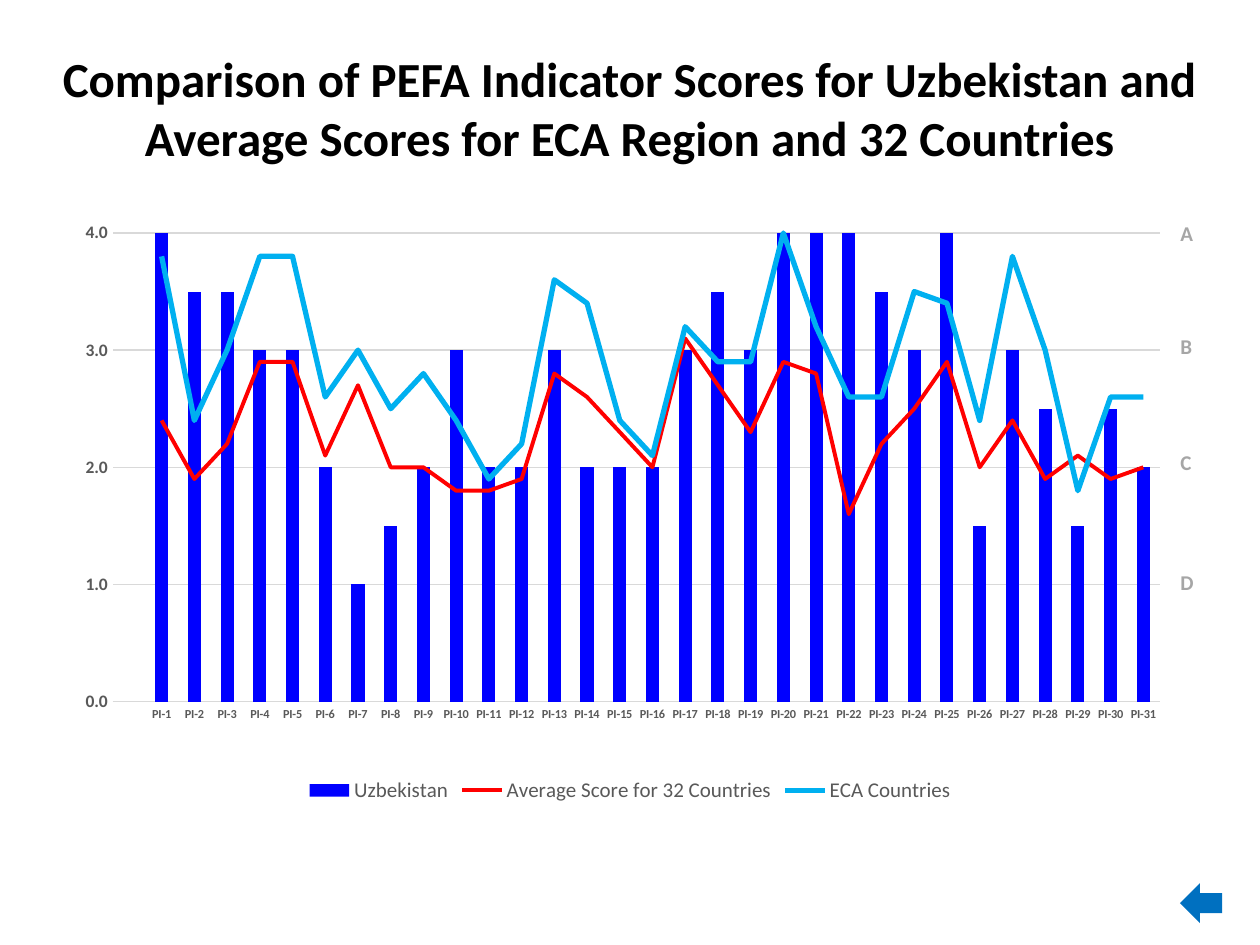
from lxml import etree
from pptx import Presentation
from pptx import util as u
from pptx.chart import data
from pptx.dml import color
from pptx.enum import chart as ch, shapes, text
from pptx.oxml import ns, parse_xml

HEAD = ("Comparison of PEFA Indicator Scores for Uzbekistan and "
        "Average Scores for ECA Region and 32 Countries")
GRADES = ["A", "B", "C", "D"]
GAPS = [0, 50, 52, 54]
COUNT = 31
SERIES = [
    ("Uzbekistan", "bar", 0,
     [4, 3.5, 3.5, 3, 3, 2, 1, 1.5, 2, 3, 2, 2, 3, 2, 2, 2,
      3, 3.5, 3, 4, 4, 4, 3.5, 3, 4, 1.5, 3, 2.5, 1.5, 2.5, 2]),
    ("Average Score for 32 Countries", "mean", 2.25,
     [2.4, 1.9, 2.2, 2.9, 2.9, 2.1, 2.7, 2, 2, 1.8, 1.8, 1.9, 2.8, 2.6, 2.3, 2,
      3.1, 2.7, 2.3, 2.9, 2.8, 1.6, 2.2, 2.5, 2.9, 2, 2.4, 1.9, 2.1, 1.9, 2]),
    ("ECA Countries", "region", 3,
     [3.8, 2.4, 3, 3.8, 3.8, 2.6, 3, 2.5, 2.8, 2.4, 1.9, 2.2, 3.6, 3.4, 2.4, 2.1,
      3.2, 2.9, 2.9, 4, 3.2, 2.6, 2.6, 3.5, 3.4, 2.4, 3.8, 3, 1.8, 2.6, 2.6]),
]
HUES = {"bar": "0000FF", "mean": "FF0000", "region": "00B0F0", "head": "000000",
        "axis": "595959", "grid": "D9D9D9", "grade": "A6A6A6", "arrow": "0070C0"}
FRAME = {"x": 0.08, "y": 0.08, "w": 0.85, "h": 0.75}
SCALE = 914400 / 126


def px(*nums):
    return [u.Emu(round(n * SCALE)) for n in nums]


def hue(name):
    return color.RGBColor.from_string(HUES[name])


def style(font, size, name, bold=False):
    font.name, font.size, font.bold = "Calibri", u.Pt(size), bold
    font.color.rgb = hue(name)


def write(para, words, size, name, bold=True, align=None, gap=0):
    run = para.add_run()
    run.text = words
    style(run.font, size, name, bold)
    para.alignment = align
    para.space_before = u.Pt(gap)


def stroke(line, name, width):
    line.color.rgb = hue(name)
    line.width = u.Pt(width)


def combine(chart):
    bars = chart.plots[0]
    node = bars.series[0]._element.getparent()
    lines = parse_xml(f'<c:lineChart {ns.nsdecls("c")}><c:grouping val="standard"/>'
                      '<c:varyColors val="0"/></c:lineChart>')
    for ser in list(bars.series)[1:]:
        item = ser._element
        for flag in item.findall(ns.qn("c:invertIfNegative")):
            item.remove(flag)
        lines.append(item)
    etree.SubElement(lines, ns.qn("c:marker")).set("val", "1")
    for axis in node.findall(ns.qn("c:axId")):
        etree.SubElement(lines, ns.qn("c:axId")).set("val", axis.get("val"))
    node.addnext(lines)


def place(chart):
    area = chart._chartSpace.chart.plotArea
    for old in area.findall(ns.qn("c:layout")):
        area.remove(old)
    modes = '<c:xMode val="edge"/><c:yMode val="edge"/>'
    sizes = "".join(f'<c:{k} val="{v}"/>' for k, v in FRAME.items())
    area.insert(0, parse_xml(
        f'<c:layout {ns.nsdecls("c")}><c:manualLayout><c:layoutTarget val="inner"/>'
        f'{modes}{sizes}</c:manualLayout></c:layout>'))


def draw_chart(slide):
    info = data.CategoryChartData(number_format="0.0")
    info.categories = [""] + [f"PI-{n}" for n in range(1, COUNT + 1)]
    for name, _, _, vals in SERIES:
        info.add_series(name, [None] + vals)
    chart = slide.shapes.add_chart(ch.XL_CHART_TYPE.COLUMN_CLUSTERED,
                                   *px(14, 183, 1232, 625), info).chart
    style(chart.font, 10, "head")
    chart.has_title = False
    combine(chart)
    place(chart)

    bars, lines = chart.plots
    bars.gap_width = 150
    bars.vary_by_categories = False
    fill = bars.series[0].format.fill
    fill.solid()
    fill.fore_color.rgb = hue("bar")
    for ser, (_, name, width, _) in zip(lines.series, SERIES[1:]):
        stroke(ser.format.line, name, width)
        ser.marker.style = ch.XL_MARKER_STYLE.NONE
        ser.smooth = False

    base, side = chart.category_axis, chart.value_axis
    for axis, size in ((base, 7), (side, 10)):
        style(axis.tick_labels.font, size, "axis", True)
        axis.major_tick_mark = axis.minor_tick_mark = ch.XL_TICK_MARK.NONE
    stroke(base.format.line, "grid", 0.75)
    side.format.line.fill.background()
    side.minimum_scale, side.maximum_scale, side.major_unit = 0, 4, 1
    side.tick_labels.number_format = "0.0"
    side.tick_labels.number_format_is_linked = False
    stroke(side.major_gridlines.format.line, "grid", 0.75)

    chart.has_legend = True
    chart.legend.position = ch.XL_LEGEND_POSITION.BOTTOM
    chart.legend.include_in_layout = False
    style(chart.legend.font, 12, "axis")


def main():
    deck = Presentation()
    deck.slide_width, deck.slide_height = px(1260, 945)
    slide = deck.slides.add_slide(deck.slide_layouts[5])

    title = slide.shapes.title
    title.left, title.top, title.width, title.height = px(10, 42, 1239, 157)
    frame = title.text_frame
    frame.word_wrap = True
    frame.auto_size = text.MSO_AUTO_SIZE.NONE
    frame.vertical_anchor = text.MSO_ANCHOR.TOP
    write(frame.paragraphs[0], HEAD, 28, "head", align=text.PP_ALIGN.CENTER)

    draw_chart(slide)

    frame = slide.shapes.add_textbox(*px(1168, 164, 33, 549)).text_frame
    frame.word_wrap = True
    frame.margin_top, frame.margin_right = px(57, 0)
    for i, (mark, gap) in enumerate(zip(GRADES, GAPS)):
        para = frame.add_paragraph() if i else frame.paragraphs[0]
        write(para, mark, 12, "grade", gap=gap)

    arrow = slide.shapes.add_shape(shapes.MSO_SHAPE.RIGHT_ARROW, *px(1180, 883, 42, 40))
    arrow.rotation = 180
    arrow.shadow.inherit = False
    arrow.fill.solid()
    arrow.fill.fore_color.rgb = hue("arrow")
    arrow.line.fill.background()

    deck.save("out.pptx")


if __name__ == "__main__":
    main()
